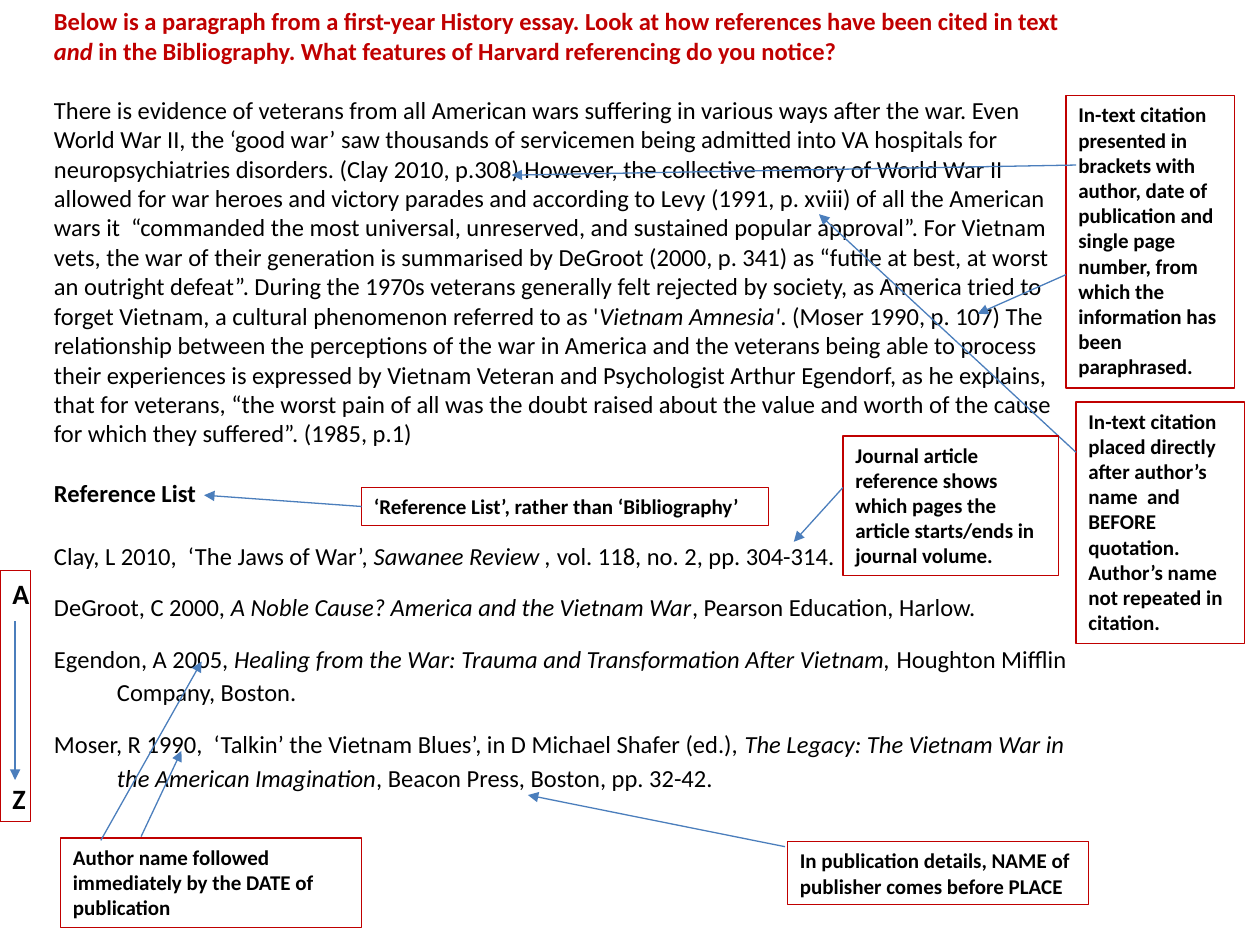
from lxml import etree
from pptx import Presentation
from pptx.dml.color import RGBColor
from pptx.enum.shapes import MSO_CONNECTOR, MSO_SHAPE
from pptx.enum.text import MSO_ANCHOR, MSO_AUTO_SIZE, PP_ALIGN
from pptx.oxml.ns import qn
from pptx.util import Inches, Pt

STRAIGHT, RECTANGLE = MSO_CONNECTOR.STRAIGHT, MSO_SHAPE.RECTANGLE
TOP, LEFT, GROW = MSO_ANCHOR.TOP, PP_ALIGN.LEFT, MSO_AUTO_SIZE.SHAPE_TO_FIT_TEXT
LEFT_SIDE = 1

COLUMNS, ROWS = 100, 75
CELL = Inches(0.1)
FONT = "Calibri"
COLORS = {"accent": "C00000", "text": "000000", "arrow": "4B7EBC"}
BODY_SIZE, NOTE_SIZE, ORDER_SIZE = 14, 12, 16
BODY_LINE, ORDER_GAP = 17, 97.5

ESSAY_BOX = (3.3, 0, 83.1, 66.1)
ORDER_BOX = (0, 45.3, 2.4, 19.9)

# Each run is (text, style): "b" for bold, "i" for italic.
TITLE = [
    ("Below is a paragraph from a first-year History essay. Look at how references "
     "have been cited in text ", "b"),
    ("and", "bi"),
    (" in the Bibliography. What features of Harvard referencing do you notice?", "b"),
]
ESSAY = [
    ("There is evidence of veterans from all American wars suffering in various ways "
     "after the war. Even World War II, the ‘good war’ saw thousands of servicemen being "
     "admitted into VA hospitals for neuropsychiatries disorders. (Clay 2010, p.308) "
     "However, the collective memory of World War II allowed for war heroes and victory "
     "parades and according to Levy (1991, p. xviii) of all the American wars it  "
     "“commanded the most universal, unreserved, and sustained popular approval”. For "
     "Vietnam vets, the war of their generation is summarised by DeGroot (2000, p. 341) "
     "as “futile at best, at worst an outright defeat”. During the 1970s veterans "
     "generally felt rejected by society, as America tried to forget Vietnam, a cultural "
     "phenomenon referred to as '", ""),
    ("Vietnam Amnesia'", "i"),
    (". (Moser 1990, p. 107) The relationship between the perceptions of the war in "
     "America and the veterans being able to process their experiences is expressed by "
     "Vietnam Veteran and Psychologist Arthur Egendorf, as he explains, that for "
     "veterans, “the worst pain of all was the doubt raised about the value and worth of "
     "the cause for which they suffered”. (1985, p.1)", ""),
]
REFERENCES = [
    [("Clay, L 2010,  ‘The Jaws of War’, ", ""), ("Sawanee Review , ", "i"),
     ("vol. 118, no. 2, pp. 304-314.", "")],
    [("DeGroot, C 2000, ", ""), ("A Noble Cause? America and the Vietnam War", "i"),
     (", Pearson Education, Harlow.", "")],
    [("Egendon, A 2005, ", ""),
     ("Healing from the War: Trauma and Transformation After Vietnam, ", "i"),
     ("Houghton Mifflin Company, Boston.", "")],
    [("Moser, R 1990,  ‘Talkin’ the Vietnam Blues’, in D Michael Shafer (ed.), ", ""),
     ("The Legacy: The Vietnam War in the American Imagination", "i"),
     (", Beacon Press, Boston, pp. 32-42.", "")],
]

# Each note is (box, text, arrows); an arrow is (start offset from the box, tip on the page),
# and a start of None joins the arrow to the middle of the left side.
NOTES = [
    ((28.7, 38.7, 32.3, 3), "‘Reference List’, rather than ‘Bibliography’",
     [(None, (16.2, 39.3))]),
    ((84.6, 7.6, 13.4, 23.2),
     "In-text citation presented in brackets with author, date of publication and single "
     "page number, from which the information has been paraphrased.",
     [((0.8, 5.5), (40.6, 13.9)), ((0, 14.2), (77.6, 24.9))]),
    ((85.4, 31.9, 13.4, 19.2),
     "In-text citation placed directly after author’s name  and BEFORE quotation. "
     "Author’s name not repeated in citation.",
     [((0, 4), (65, 17))]),
    ((4.8, 66.5, 23.9, 7.1), "Author name followed immediately by the DATE of publication",
     [((6.4, -0.1), (14.4, 59.6)), ((3.2, 0.2), (16, 52.5))]),
    ((62.5, 66.8, 23.9, 5), "In publication details, NAME of publisher comes before PLACE",
     [((-0.2, 0.4), (41.9, 63.1))]),
    ((66.9, 34.6, 17.1, 11.1),
     "Journal article reference shows which pages the article starts/ends in journal volume.",
     [((0, 4.1), (63, 43))]),
]


def cells(values):
    """Turn grid columns and rows into lengths."""
    return [int(value * CELL) for value in values]


def write(para, runs, size, color="text"):
    para.alignment = LEFT
    for text, style in runs:
        span = para.add_run()
        span.text = text
        span.font.name, span.font.size = FONT, Pt(size)
        span.font.bold, span.font.italic = "b" in style, "i" in style
        span.font.color.rgb = RGBColor.from_string(COLORS[color])


def prepare_frame(shape):
    frame = shape.text_frame
    frame.word_wrap, frame.auto_size, frame.vertical_anchor = True, GROW, TOP
    return frame


def add_essay(page, box):
    frame = prepare_frame(page.shapes.add_textbox(*cells(box)))
    write(frame.paragraphs[0], TITLE, BODY_SIZE, "accent")
    for runs in (ESSAY, [("Reference List", "b")]):
        para = frame.add_paragraph()
        para.space_before = Pt(BODY_LINE)
        write(para, runs, BODY_SIZE)
    for index, runs in enumerate(REFERENCES):
        para = frame.add_paragraph()
        hanging = para._p.get_or_add_pPr()
        hanging.set("marL", str(Inches(0.5)))
        hanging.set("indent", str(-Inches(0.5)))
        para.line_spacing, para.space_after = 1.15, Pt(10)
        para.space_before = Pt(0 if index else BODY_LINE)
        write(para, runs, BODY_SIZE)


def add_frame(page, box):
    """Add an outlined, unfilled rectangle for text."""
    shape = page.shapes.add_shape(RECTANGLE, *cells(box))
    shape.shadow.inherit = False
    shape.fill.background()
    shape.line.color.rgb = RGBColor.from_string(COLORS["accent"])
    shape.line.width = Pt(0.75)
    return shape


def add_arrow(page, shape, box, start, tip):
    offset = start or (0, box[3] / 2)
    origin = (box[0] + offset[0], box[1] + offset[1])
    arrow = page.shapes.add_connector(STRAIGHT, *cells(origin + tip))
    if start is None:
        arrow.begin_connect(shape, LEFT_SIDE)
    arrow.line.color.rgb = RGBColor.from_string(COLORS["arrow"])
    arrow.line.width = Pt(0.75)
    etree.SubElement(arrow.line._get_or_add_ln(), qn("a:tailEnd"), type="triangle")
    etree.SubElement(arrow._element.spPr, qn("a:effectLst"))


def add_note(page, box, text, arrows):
    shape = add_frame(page, box)
    write(prepare_frame(shape).paragraphs[0], [(text, "b")], NOTE_SIZE)
    for start, tip in arrows:
        add_arrow(page, shape, box, start, tip)


def add_alphabet_order(page, box):
    shape = add_frame(page, box)
    frame = prepare_frame(shape)
    write(frame.paragraphs[0], [("A", "b")], ORDER_SIZE)
    last = frame.add_paragraph()
    last.space_before = Pt(ORDER_GAP)
    write(last, [("Z", "b")], ORDER_SIZE)
    middle = box[2] / 2
    add_arrow(page, shape, box, (middle, 4), (box[0] + middle, box[1] + 16.6))


def main():
    deck = Presentation()
    deck.slide_width, deck.slide_height = cells((COLUMNS, ROWS))
    page = deck.slides.add_slide(deck.slide_layouts[6])
    add_essay(page, ESSAY_BOX)
    for box, text, arrows in NOTES:
        add_note(page, box, text, arrows)
    add_alphabet_order(page, ORDER_BOX)
    deck.save("out.pptx")


if __name__ == "__main__":
    main()
